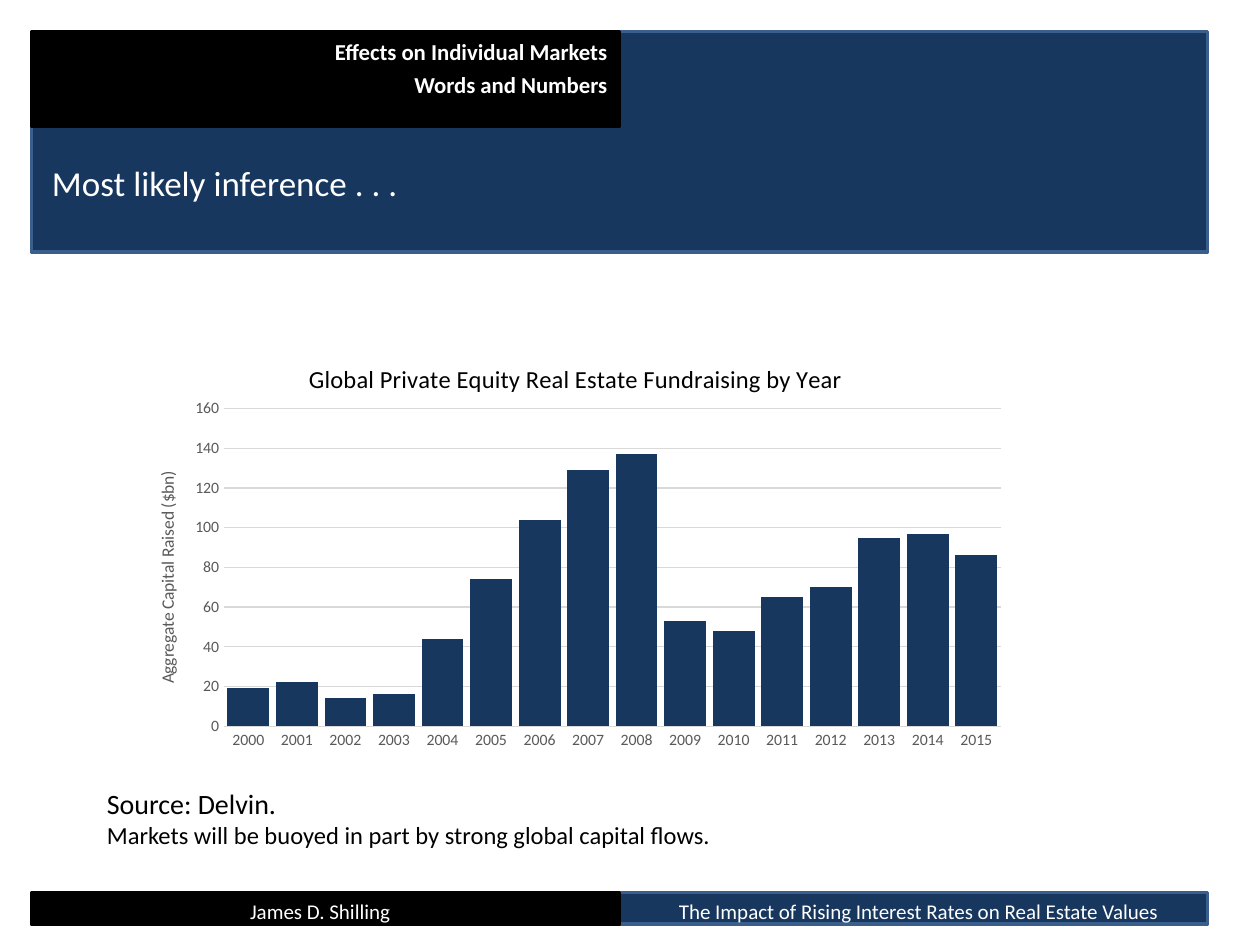
from lxml import etree
from pptx import Presentation
from pptx.chart import data
from pptx.dml.color import RGBColor
from pptx.enum import chart as charts, shapes, text
from pptx.oxml import ns
from pptx.util import Pt

THEME = {
    "navy": "17375E", "navy_edge": "3A5F8C", "black": "000000",
    "white": "FFFFFF", "gray": "595959", "grid": "D9D9D9",
    "font": "Calibri",
    "heading": 20, "source": 16, "body": 14, "section": 13,
    "footer": 12, "axis_title": 10, "axis": 9,
}
LEFT, CENTER, RIGHT = text.PP_ALIGN.LEFT, text.PP_ALIGN.CENTER, text.PP_ALIGN.RIGHT

BANDS = [
    (18, 510, 672, 18, "navy", "navy_edge"),
    (18, 510, 336, 18, "black", "black"),
    (18, 18, 672, 126, "navy", "navy_edge"),
    (18, 18, 336, 54, "black", "black"),
]
TEXTS = [
    (18, 510, 330, 22, CENTER, "white", False, 7.2,
     [("James D. Shilling", "footer")]),
    (360, 510, 330, 22, CENTER, "white", False, 7.2,
     [("The Impact of Rising Interest Rates on Real Estate Values", "footer")]),
    (18, 88.5, 672, 31.5, LEFT, "white", False, 11.7,
     [("Most likely inference . . .", "heading")]),
    (36, 18, 318, 23, RIGHT, "white", True, 7.2,
     [("Effects on Individual Markets", "section")]),
    (36, 37, 318, 23, RIGHT, "white", True, 7.2,
     [("Words and Numbers", "section")]),
    (54, 446, 582, 44, LEFT, "black", False, 7.2,
     [("Source: Delvin.", "source"),
      ("Markets will be buoyed in part by strong global capital flows.", "body")]),
]
CHART_BOX = (72, 190, 510, 242)
CHART_TITLE = "Global Private Equity Real Estate Fundraising by Year"
VALUE_TITLE = "Aggregate Capital Raised ($bn)"
FIRST_YEAR = 2000
CAPITAL_RAISED = [19, 22, 14, 16, 44, 74, 104, 129, 137, 53, 48, 65, 70, 95, 97, 86]


def color(name):
    return RGBColor.from_string(THEME[name])


def style_font(font, size, color_name, bold=False):
    font.name = THEME["font"]
    font.size = Pt(THEME[size])
    font.bold = bold
    font.color.rgb = color(color_name)


def add_band(slide, left, top, width, height, fill, edge):
    shape = slide.shapes.add_shape(
        shapes.MSO_SHAPE.RECTANGLE, *map(Pt, (left, top, width, height)))
    shape.shadow.inherit = False
    shape.fill.solid()
    shape.fill.fore_color.rgb = color(fill)
    shape.line.color.rgb = color(edge)
    shape.line.width = Pt(2)


def add_text(slide, left, top, width, height, align, color_name, bold, inset, lines):
    box = slide.shapes.add_textbox(*map(Pt, (left, top, width, height)))
    frame = box.text_frame
    frame.word_wrap = True
    frame.margin_left = Pt(inset)
    frame.text = "\n".join(line for line, size in lines)
    for paragraph, (line, size) in zip(frame.paragraphs, lines):
        paragraph.alignment = align
        style_font(paragraph.runs[0].font, size, color_name, bold)


def place(element, **settings):
    for old in element.findall(ns.qn("c:layout")):
        element.remove(old)
    layout = etree.Element(ns.qn("c:layout"))
    manual = etree.SubElement(layout, ns.qn("c:manualLayout"))
    for tag, value in settings.items():
        etree.SubElement(manual, ns.qn("c:" + tag)).set("val", str(value))
    caption = element.find(ns.qn("c:tx"))
    element.insert(0 if caption is None else 1, layout)


def set_title(owner, caption, size, color_name, x, y):
    title = owner.chart_title if hasattr(owner, "chart_title") else owner.axis_title
    title.text_frame.text = caption
    style_font(title.text_frame.paragraphs[0].runs[0].font, size, color_name)
    place(title._element, xMode="edge", yMode="edge", x=x, y=y)


def add_fundraising_chart(slide):
    chart_data = data.CategoryChartData()
    chart_data.categories = [str(FIRST_YEAR + i) for i in range(len(CAPITAL_RAISED))]
    chart_data.add_series("Series 1", CAPITAL_RAISED)
    chart = slide.shapes.add_chart(
        charts.XL_CHART_TYPE.COLUMN_CLUSTERED, *map(Pt, CHART_BOX), chart_data).chart
    style_font(chart.font, "axis_title", "black")
    chart.has_legend = False
    set_title(chart, CHART_TITLE, "body", "black", 0.2, 0.06)

    plot = chart.plots[0]
    plot.gap_width = 16
    plot.overlap = 3
    plot.vary_by_categories = False
    series = plot.series[0]
    series.format.fill.solid()
    series.format.fill.fore_color.rgb = color("navy")

    years, amounts = chart.category_axis, chart.value_axis
    for axis in (years, amounts):
        style_font(axis.tick_labels.font, "axis", "gray")
        axis.major_tick_mark = charts.XL_TICK_MARK.NONE
        axis.minor_tick_mark = charts.XL_TICK_MARK.NONE
    amounts.minimum_scale, amounts.maximum_scale, amounts.major_unit = 0, 160, 20
    amounts.format.line.fill.background()
    for line in (years.format.line, amounts.major_gridlines.format.line):
        line.color.rgb = color("grid")
        line.width = Pt(0.75)
    set_title(amounts, VALUE_TITLE, "axis_title", "gray", 0.03, 0.32)
    place(chart._chartSpace.chart.plotArea, layoutTarget="inner",
          xMode="edge", yMode="edge", x=0.11, y=0.18, w=0.87, h=0.75)


def main():
    presentation = Presentation()
    presentation.slide_width, presentation.slide_height = Pt(720), Pt(540)
    slide = presentation.slides.add_slide(presentation.slide_layouts[6])
    for band in BANDS:
        add_band(slide, *band)
    for item in TEXTS:
        add_text(slide, *item)
    add_fundraising_chart(slide)
    presentation.save("out.pptx")


if __name__ == "__main__":
    main()
